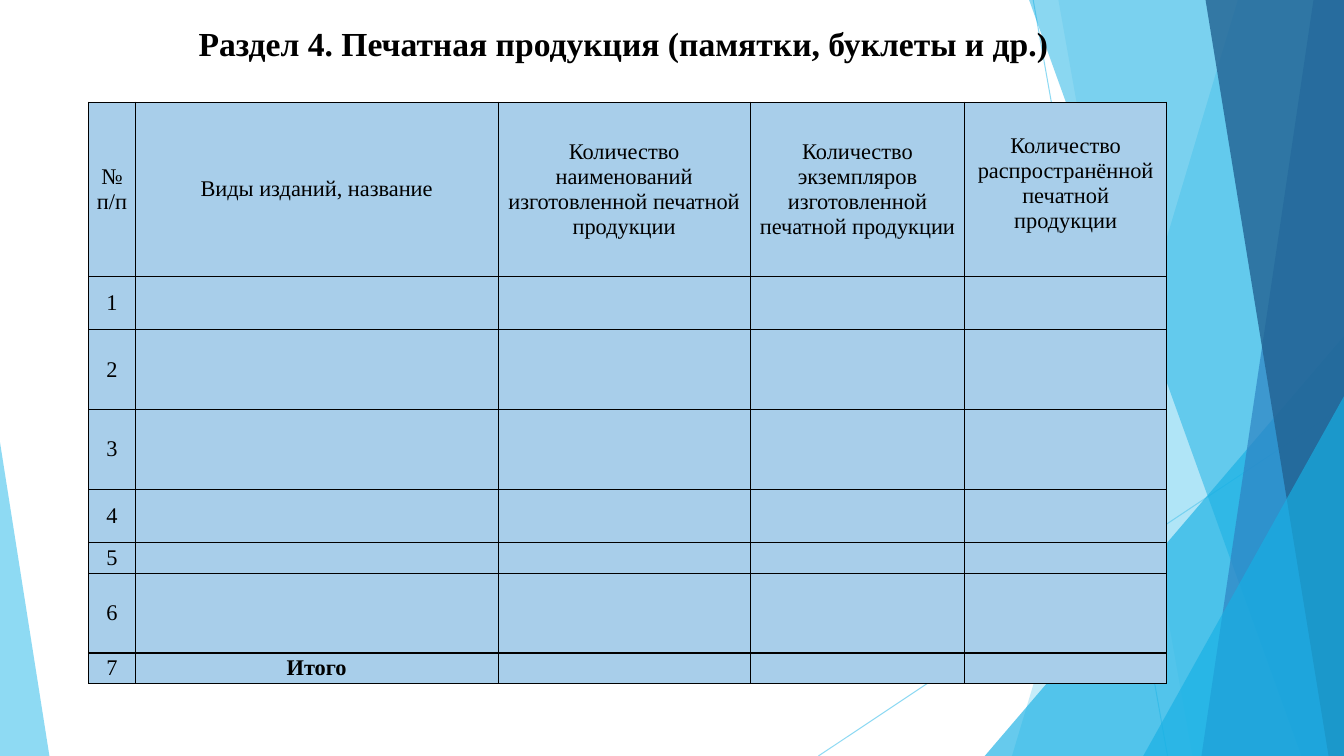
"""Build the slide with the table of printed materials over faceted blue shapes."""
from dataclasses import dataclass

from lxml.etree import SubElement
from pptx import Presentation
from pptx.dml.color import RGBColor
from pptx.enum.shapes import MSO_CONNECTOR, MSO_SHAPE
from pptx.enum.text import MSO_ANCHOR, MSO_AUTO_SIZE, PP_ALIGN
from pptx.oxml.ns import qn
from pptx.slide import Slide
from pptx.table import _Cell
from pptx.text.text import TextFrame
from pptx.util import Pt

WIDTH, HEIGHT = 960, 540
SKY, CYAN, BLUE, NAVY = "5FCBEF", "17B0E4", "2E83C3", "226292"
CELL_FILL, BLACK = "A8CEEA", "000000"
FONT = "Times New Roman"


@dataclass
class Ray:
    start: tuple[float, float]
    end: tuple[float, float]


@dataclass
class Band:
    top_left: float
    bottom_left: float
    color: str
    opacity: int


@dataclass
class Triangle:
    left: float
    top: float
    width: float
    apex: float
    color: str
    opacity: int


RAYS = [Ray((738, 0), (834, 540)), Ray((960, 290), (584.6, 540))]
FACETS = [
    Band(884.2, 722.9, SKY, 36),
    Band(756, 851.8, SKY, 20),
    Triangle(703.4, 240, 256.6, 1, CYAN, 66),
    Band(735.1, 929.5, CYAN, 50),
    Band(938.2, 858.2, BLUE, 70),
    Band(861.1, 949, NAVY, 80),
    Triangle(816.6, 283, 143.4, 1, CYAN, 66),
    Triangle(0, 316, 35.3, 0, SKY, 70),
]
HEADINGS = [
    "№\nп/п",
    "Виды изданий, название",
    "Количество наименований изготовленной печатной продукции",
    "Количество экземпляров изготовленной печатной продукции",
    "Количество распространённой\nпечатной продукции",
]
COLUMN_WIDTHS = [33.2, 259.2, 180, 153.4, 144]
ROW_HEIGHTS = [124.5, 38, 57, 57, 38, 22, 57, 22]
TOTAL = "Итого"


def rgb(color: str) -> RGBColor:
    """Turn a hex string into a colour."""
    return RGBColor.from_string(color)


def set_opacity(element, percent: int) -> None:
    """Make every explicit colour inside the element translucent."""
    for color in element.iter(qn("a:srgbClr")):
        SubElement(color, qn("a:alpha"), val=str(percent * 1000))


def draw_ray(slide: Slide, ray: Ray) -> None:
    """Draw a thin translucent background line."""
    line = slide.shapes.add_connector(
        MSO_CONNECTOR.STRAIGHT, *(Pt(value) for value in ray.start + ray.end)
    )
    line.line.color.rgb = rgb(SKY)
    line.line.width = Pt(0.75)
    set_opacity(line.element, 70)
    SubElement(line.element.spPr, qn("a:effectLst"))


def draw_facet(slide: Slide, facet: Band | Triangle) -> None:
    """Draw a translucent band reaching the right edge, or a triangle."""
    if isinstance(facet, Band):
        builder = slide.shapes.build_freeform(Pt(facet.top_left), 0)
        corners = [(WIDTH, 0), (WIDTH, HEIGHT), (facet.bottom_left, HEIGHT)]
        builder.add_line_segments([(Pt(x), Pt(y)) for x, y in corners])
        shape = builder.convert_to_shape()
    else:
        shape = slide.shapes.add_shape(
            MSO_SHAPE.ISOSCELES_TRIANGLE, Pt(facet.left), Pt(facet.top),
            Pt(facet.width), Pt(HEIGHT - facet.top),
        )
        shape.adjustments[0] = facet.apex
    shape.shadow.inherit = False
    shape.line.fill.background()
    shape.fill.solid()
    shape.fill.fore_color.rgb = rgb(facet.color)
    set_opacity(shape.element, facet.opacity)


def write(frame: TextFrame, text: str, size: float, bold: bool, align: PP_ALIGN) -> None:
    """Put formatted text into a frame."""
    frame.text = text
    for paragraph in frame.paragraphs:
        paragraph.alignment = align
        for run in paragraph.runs:
            run.font.name = FONT
            run.font.size = Pt(size)
            run.font.bold = bold
            run.font.color.rgb = rgb(BLACK)


def draw_title(slide: Slide) -> None:
    """Place the section title in front of the facets."""
    title = slide.shapes.title
    title.left, title.top, title.width, title.height = Pt(134.6), Pt(13), Pt(628), Pt(36)
    frame = title.text_frame
    write(frame, "Раздел 4. Печатная продукция (памятки, буклеты и др.)", 24, True, PP_ALIGN.LEFT)
    frame.word_wrap = False
    frame.auto_size = MSO_AUTO_SIZE.NONE
    title.element.getparent().append(title.element)


def format_cell(cell: _Cell, text: str) -> None:
    """Give a cell its text, thin black borders and fill."""
    write(cell.text_frame, text, 16, text == TOTAL, PP_ALIGN.CENTER)
    cell.vertical_anchor = MSO_ANCHOR.MIDDLE
    cell.margin_left = cell.margin_right = Pt(5)
    cell.margin_top = 0
    cell.margin_bottom = Pt(8.6) if text == HEADINGS[-1] else 0
    properties = cell._tc.get_or_add_tcPr()
    for side in ("a:lnL", "a:lnR", "a:lnT", "a:lnB"):
        border = SubElement(properties, qn(side), w=str(Pt(1)))
        SubElement(SubElement(border, qn("a:solidFill")), qn("a:srgbClr"), val=BLACK)
    cell.fill.solid()
    cell.fill.fore_color.rgb = rgb(CELL_FILL)


def draw_table(slide: Slide) -> None:
    """Draw the numbered table with its headings and total row."""
    table = slide.shapes.add_table(
        len(ROW_HEIGHTS), len(COLUMN_WIDTHS), Pt(63.4), Pt(73),
        Pt(sum(COLUMN_WIDTHS)), Pt(sum(ROW_HEIGHTS)),
    ).table
    table.first_row = table.horz_banding = False
    for column, width in zip(table.columns, COLUMN_WIDTHS):
        column.width = Pt(width)
    last = len(ROW_HEIGHTS) - 1
    for number, (row, height) in enumerate(zip(table.rows, ROW_HEIGHTS)):
        row.height = Pt(height)
        label = TOTAL if number == last else ""
        texts = [str(number), label, "", "", ""] if number else HEADINGS
        for cell, text in zip(row.cells, texts):
            format_cell(cell, text)


def main() -> None:
    """Assemble and save the slide."""
    presentation = Presentation()
    presentation.slide_width, presentation.slide_height = Pt(WIDTH), Pt(HEIGHT)
    slide = presentation.slides.add_slide(presentation.slide_layouts[5])
    for ray in RAYS:
        draw_ray(slide, ray)
    for facet in FACETS:
        draw_facet(slide, facet)
    draw_title(slide)
    draw_table(slide)
    presentation.save("out.pptx")


if __name__ == "__main__":
    main()
